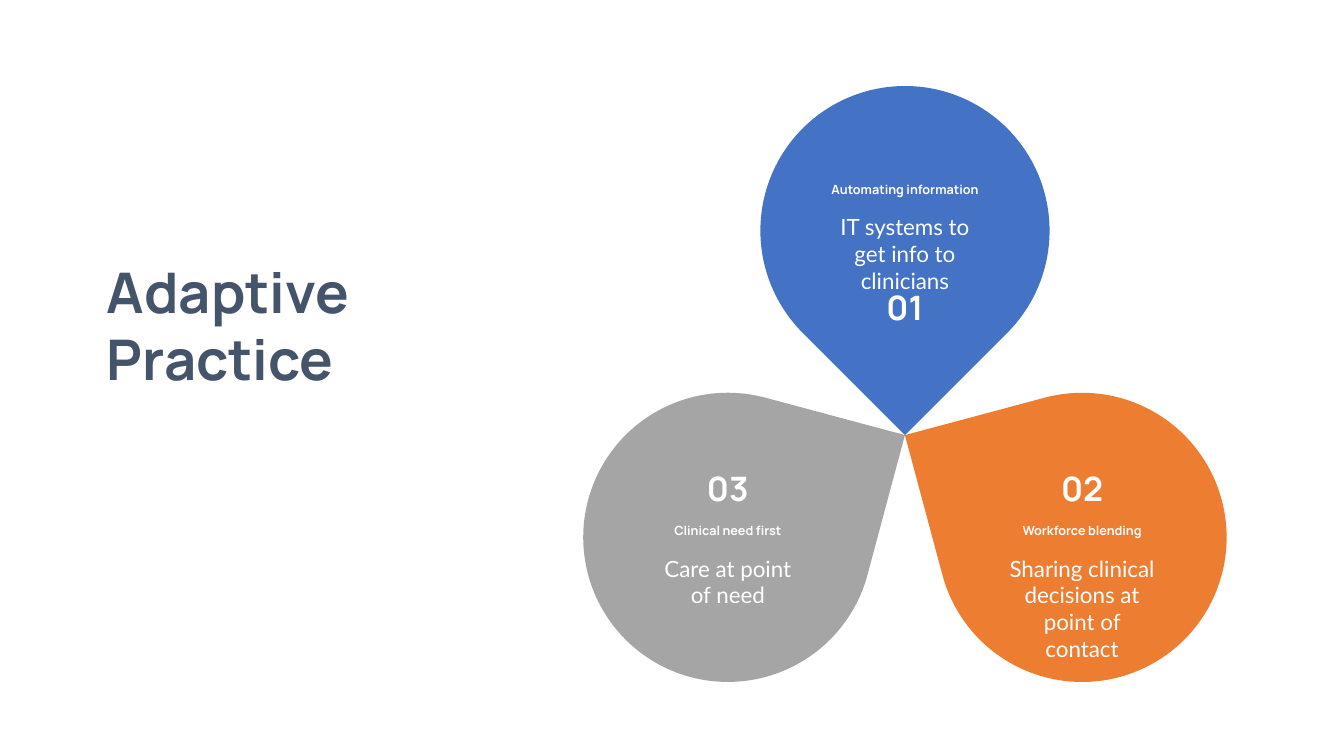
from math import cos, radians, sin, sqrt

from pptx import Presentation
from pptx.dml.color import RGBColor
from pptx.enum.shapes import MSO_SHAPE
from pptx.enum.text import MSO_ANCHOR, MSO_AUTO_SIZE, PP_ALIGN
from pptx.util import Pt

COLORS = {
    "title": "44546A",
    "blue": "4472C4",
    "orange": "ED7D31",
    "gray": "A5A5A5",
    "white": "FFFFFF",
}
HEADING_FONT = "Manrope"
BODY_FONT = "Lato"

HUB_X, HUB_Y = 646.4, 310.8
PETAL_SIZE = 206.6
HUB_DISTANCE = PETAL_SIZE / sqrt(2)

# number, heading, body, color, direction from hub, number offset, heading offset
PETALS = [
    ("03", "Clinical need first", "Care at point of need", "gray", 150, -53.5, -14),
    ("01", "Automating information", "IT systems to get info to clinicians",
     "blue", 270, 36.4, -38.6),
    ("02", "Workforce blending", "Sharing clinical decisions at point of contact",
     "orange", 30, -53.5, -14),
]


class SlideBuilder:
    def __init__(self, slide):
        self.slide = slide

    def set_text(self, shape, text, size, color, font=HEADING_FONT, bold=True,
                 alignment=PP_ALIGN.CENTER):
        frame = shape.text_frame
        frame.word_wrap = True
        frame.auto_size = MSO_AUTO_SIZE.NONE
        frame.vertical_anchor = MSO_ANCHOR.TOP
        paragraph = frame.paragraphs[0]
        paragraph.text = text
        paragraph.alignment = alignment
        paragraph.line_spacing = 1.0
        paragraph.font.name = font
        paragraph.font.size = Pt(size)
        paragraph.font.bold = bold
        paragraph.font.color.rgb = RGBColor.from_string(COLORS[color])

    def title(self, text, left, top, width, height):
        title = self.slide.shapes.title
        title.left, title.top = Pt(left), Pt(top)
        title.width, title.height = Pt(width), Pt(height)
        self.set_text(title, text, 40, "title", alignment=PP_ALIGN.LEFT)

    def label(self, text, center_x, top, width, height, size, **style):
        box = self.slide.shapes.add_textbox(
            Pt(center_x - width / 2), Pt(top), Pt(width), Pt(height))
        self.set_text(box, text, size, "white", **style)

    def teardrop(self, center_x, center_y, color, rotation):
        shape = self.slide.shapes.add_shape(
            MSO_SHAPE.TEAR, Pt(center_x - PETAL_SIZE / 2),
            Pt(center_y - PETAL_SIZE / 2), Pt(PETAL_SIZE), Pt(PETAL_SIZE))
        shape.rotation = rotation
        shape.shadow.inherit = False
        shape.fill.solid()
        shape.fill.fore_color.rgb = RGBColor.from_string(COLORS[color])
        shape.line.fill.background()

    def petal(self, number, heading, body, color, direction,
              number_offset, heading_offset):
        """Draw a teardrop whose tip touches the hub, with its three labels."""
        center_x = HUB_X + HUB_DISTANCE * cos(radians(direction))
        center_y = HUB_Y + HUB_DISTANCE * sin(radians(direction))
        heading_top = center_y + heading_offset
        self.teardrop(center_x, center_y, color, (direction + 225) % 360)
        self.label(number, center_x, center_y + number_offset, 67.7, 36, 24)
        self.label(heading, center_x, heading_top, 121, 18, 9)
        self.label(body, center_x, heading_top + 22.8, 121.7, 65.5, 16,
                   font=BODY_FONT, bold=False)


def main():
    presentation = Presentation()
    presentation.slide_width = Pt(960)
    presentation.slide_height = Pt(540)
    slide = presentation.slides.add_slide(presentation.slide_layouts[5])
    builder = SlideBuilder(slide)
    builder.title("Adaptive Practice", 69.1, 180, 309.6, 104.4)
    for petal in PETALS:
        builder.petal(*petal)
    presentation.save("out.pptx")


if __name__ == "__main__":
    main()
